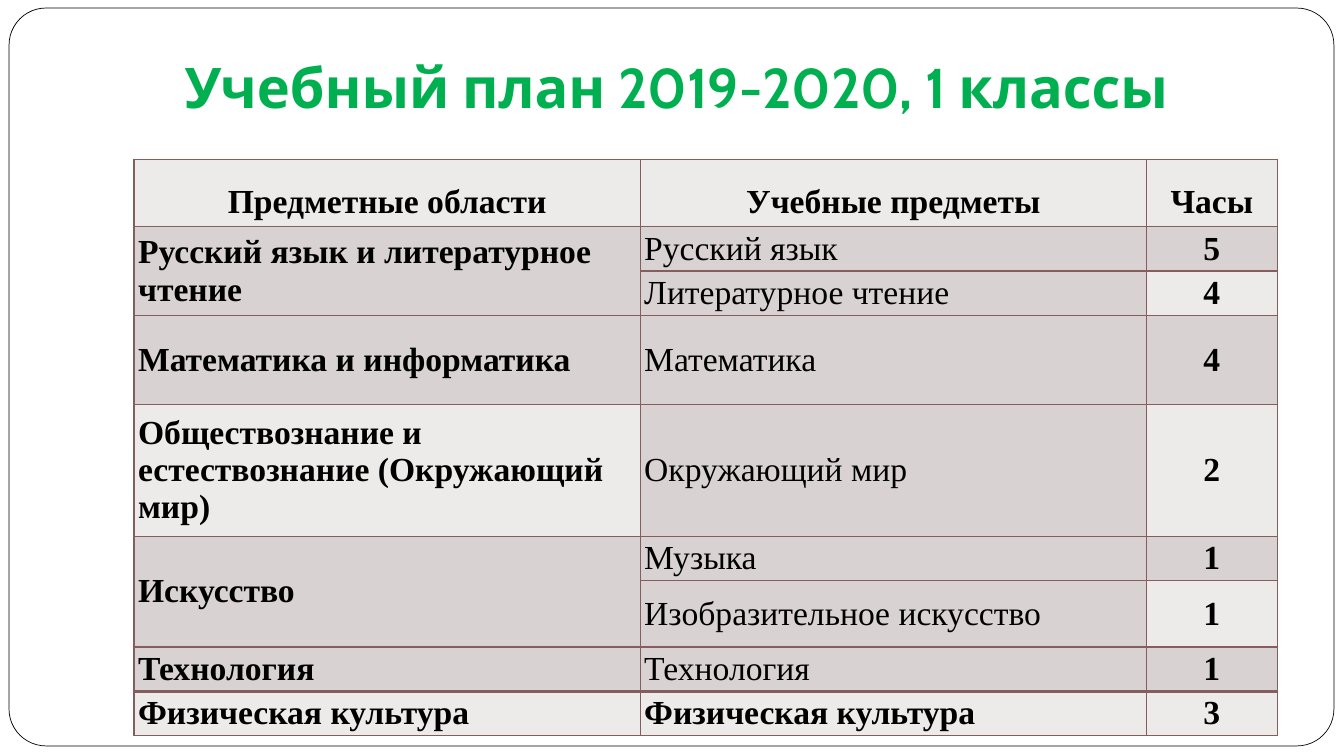
from pptx import Presentation
from pptx.dml.color import RGBColor
from pptx.enum.shapes import MSO_SHAPE
from pptx.enum.text import MSO_ANCHOR, PP_ALIGN
from pptx.oxml import parse_xml
from pptx.oxml.ns import nsdecls
from pptx.util import Inches, Pt

COLORS = {
    "white": "FFFFFF", "black": "000000", "title": "00B050",
    "border": "855D5D", "light": "EDEAEA", "dark": "D9D2D2",
}
HEADINGS = ("Предметные области", "Учебные предметы", "Часы")
CURRICULUM = [
    ("Русский язык и литературное чтение", [("Русский язык", 5), ("Литературное чтение", 4)]),
    ("Математика и информатика", [("Математика", 4)]),
    ("Обществознание и естествознание (Окружающий мир)", [("Окружающий мир", 2)]),
    ("Искусство", [("Музыка", 1), ("Изобразительное искусство", 1)]),
    ("Технология", [("Технология", 1)]),
    ("Физическая культура", [("Физическая культура", 3)]),
]
COLUMN_WIDTHS = (5.02, 5.02, 1.3)
ROW_HEIGHTS = (0.67, 0.44, 0.44, 0.88, 1.31, 0.44, 0.66, 0.44, 0.44)


def color(name):
    return RGBColor.from_string(COLORS[name])


def set_font(paragraph, face, size, color_name, bold):
    font = paragraph.font
    font.name, font.size, font.bold = face, Pt(size), bold
    font.color.rgb = color(color_name)


def add_frame(slide, left, top, width, height):
    frame = slide.shapes.add_shape(MSO_SHAPE.ROUNDED_RECTANGLE, Inches(left), Inches(top),
                                   Inches(width), Inches(height))
    frame.adjustments[0] = 0.05
    frame.shadow.inherit = False
    frame.fill.solid()
    frame.fill.fore_color.rgb = color("white")
    frame.line.color.rgb = color("black")
    frame.line.width = Pt(0.5)


def add_title(slide, left, top, width, height):
    title = slide.shapes.add_textbox(Inches(left), Inches(top), Inches(width), Inches(height))
    text = title.text_frame
    text.word_wrap = True
    text.vertical_anchor = MSO_ANCHOR.BOTTOM
    text.margin_bottom = Inches(0.1)
    text.text = "Учебный план 2019-2020, 1 классы"
    set_font(text.paragraphs[0], "Cabin", 40, "title", True)


def style_cell(cell, text, fill, bold, centered, top_border=1):
    # Borders come before the fill in the cell properties
    properties = cell._tc.get_or_add_tcPr()
    for side, points in (("L", 1), ("R", 1), ("T", top_border), ("B", 1)):
        properties.append(parse_xml(
            f'<a:ln{side} {nsdecls("a")} w="{Pt(points)}"><a:solidFill>'
            f'<a:srgbClr val="{COLORS["border"]}"/></a:solidFill></a:ln{side}>'))
    cell.fill.solid()
    cell.fill.fore_color.rgb = color(fill)
    cell.margin_left = cell.margin_right = Inches(0.04)
    cell.margin_top = cell.margin_bottom = 0
    cell.vertical_anchor = MSO_ANCHOR.MIDDLE
    cell.text = text
    paragraph = cell.text_frame.paragraphs[0]
    paragraph.alignment = PP_ALIGN.CENTER if centered else PP_ALIGN.LEFT
    set_font(paragraph, "Times New Roman", 24, "black", bold)


def add_curriculum(slide, left, top):
    table = slide.shapes.add_table(
        len(ROW_HEIGHTS), len(COLUMN_WIDTHS), Inches(left), Inches(top),
        Inches(sum(COLUMN_WIDTHS)), Inches(sum(ROW_HEIGHTS))).table
    for column, width in zip(table.columns, COLUMN_WIDTHS):
        column.width = Inches(width)
    for row, height in zip(table.rows, ROW_HEIGHTS):
        row.height = Inches(height)

    # Header
    for column, heading in enumerate(HEADINGS):
        cell = table.cell(0, column)
        style_cell(cell, heading, "light", True, True)
        cell.text_frame.paragraphs[0].line_spacing = 1.5

    # Subject areas, each spanning its subjects
    last = len(ROW_HEIGHTS) - 1
    row = 1
    for area, subjects in CURRICULUM:
        first = row
        for subject, hours in subjects:
            band = "dark" if row % 2 else "light"
            is_last = row == last
            top_border = 2 if is_last else 1
            style_cell(table.cell(row, 0), area if row == first else "", band, True, False,
                       top_border)
            style_cell(table.cell(row, 1), subject, "light" if is_last else "dark", is_last,
                       False, top_border)
            style_cell(table.cell(row, 2), str(hours), band, True, True, top_border)
            row += 1
        if len(subjects) > 1:
            table.cell(first, 0).merge(table.cell(row - 1, 0))


def main():
    presentation = Presentation()
    presentation.slide_width, presentation.slide_height = Inches(13.33), Inches(7.5)
    slide = presentation.slides.add_slide(presentation.slide_layouts[6])
    add_frame(slide, 0.09, 0.08, 13.14, 7.32)
    add_title(slide, 1.73, -0.63, 10.96, 1.92)
    add_curriculum(slide, 1.33, 1.58)
    presentation.save("out.pptx")


if __name__ == "__main__":
    main()
